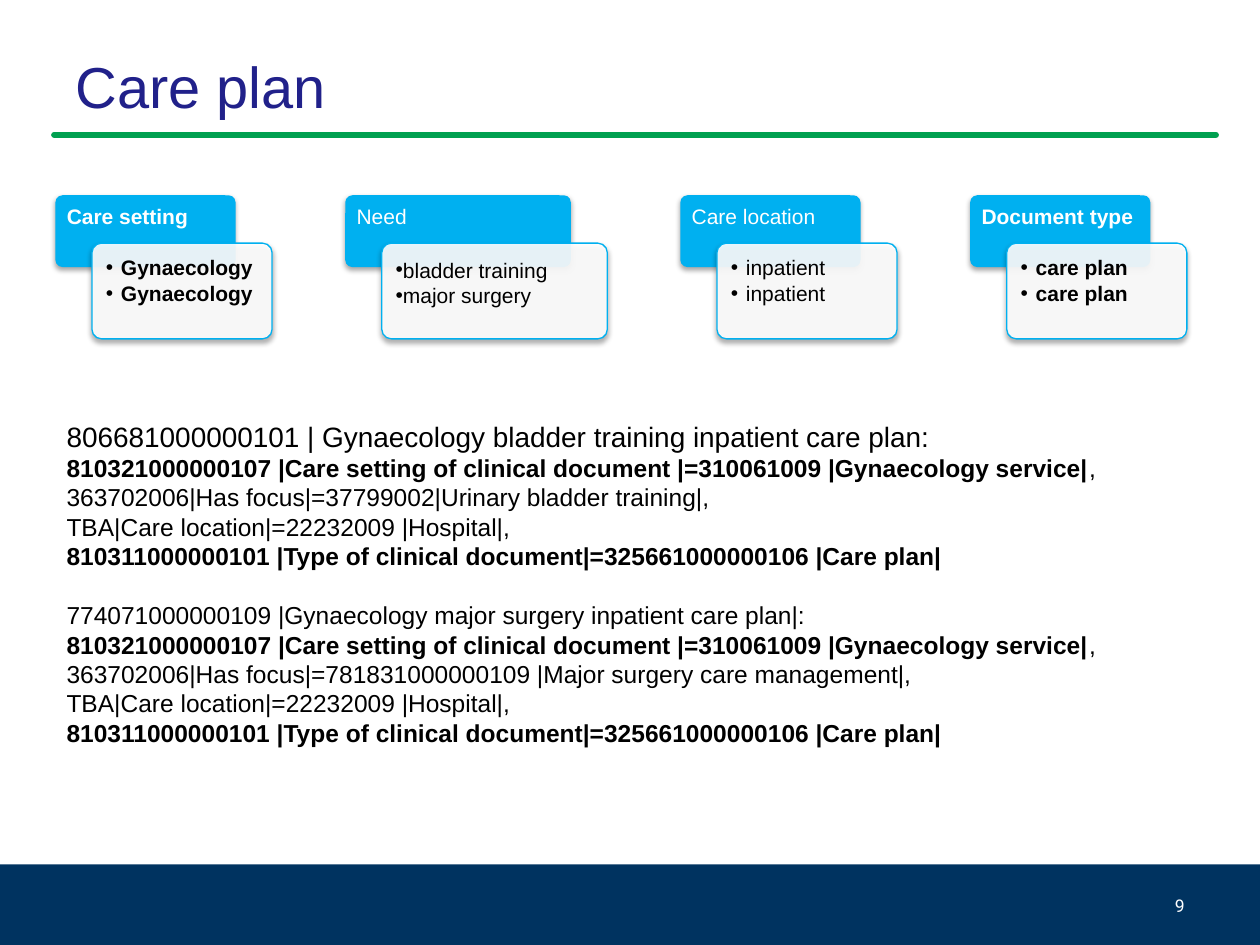
from dataclasses import dataclass

from lxml import etree
from pptx import Presentation, util as u
from pptx.dml.color import RGBColor
from pptx.enum import shapes, text
from pptx.oxml import ns


@dataclass(frozen=True)
class Theme:
    navy: str = "003360"
    green: str = "00A050"
    indigo: str = "21218A"
    sky: str = "00B0F0"
    white: str = "FFFFFF"
    black: str = "000000"
    font: str = "Arial"
    number_font: str = "Roboto"
    title_size: int = 33
    lead_size: int = 16
    body_size: int = 14
    card_size: int = 12
    number_size: int = 10


class SlideBuilder:
    columns, rows = 100, 75

    def __init__(self, presentation, theme):
        self.theme = theme
        self.column = presentation.slide_width / self.columns
        self.row = presentation.slide_height / self.rows
        self.slide = presentation.slides.add_slide(presentation.slide_layouts[6])

    def place(self, left, top, width, height):
        return (u.Emu(round(left * self.column)), u.Emu(round(top * self.row)),
                u.Emu(round(width * self.column)), u.Emu(round(height * self.row)))

    def element(self, parent, tag, **attributes):
        return etree.SubElement(parent, ns.qn(tag), attributes)

    def text_box(self, box, insets=(0.1, 0.05, 0.1, 0.05)):
        frame = self.slide.shapes.add_textbox(*self.place(*box)).text_frame
        frame.word_wrap = True
        frame.margin_left, frame.margin_top, frame.margin_right, frame.margin_bottom = map(u.Inches, insets)
        return frame

    def paragraph(self, frame, pieces, size, color, bold=False, font=None, bullet_indent=None):
        paragraph = frame.paragraphs[0]
        if paragraph.runs:
            paragraph = frame.add_paragraph()
        if bullet_indent is not None:
            properties = paragraph._p.get_or_add_pPr()
            properties.set("marL", str(u.Inches(bullet_indent)))
            properties.set("indent", str(-u.Inches(bullet_indent)))
            self.element(properties, "a:buFont", typeface=self.theme.font)
            self.element(properties, "a:buChar", char="•")
        paragraph.font.name = font or self.theme.font
        paragraph.font.size = u.Pt(size)
        paragraph.font.bold = bold
        paragraph.font.color.rgb = RGBColor.from_string(color)
        for piece in pieces:
            paragraph.add_run().text = piece
        return paragraph

    def panel(self, kind, box, fill, line=None, opacity=100, shadow=False):
        shape = self.slide.shapes.add_shape(kind, *self.place(*box))
        shape.fill.solid()
        shape.fill.fore_color.rgb = RGBColor.from_string(fill)
        if opacity < 100:
            color = shape.element.spPr.find(".//" + ns.qn("a:srgbClr"))
            self.element(color, "a:alpha", val=str(opacity * 1000))
        if line:
            shape.line.color.rgb = RGBColor.from_string(line)
            shape.line.width = u.Pt(0.75)
        else:
            shape.line.fill.background()
        shape.shadow.inherit = False
        if shadow:
            effects = shape.element.spPr.find(ns.qn("a:effectLst"))
            outer = self.element(effects, "a:outerShdw", blurRad=str(u.Pt(3.1)), dist=str(u.Pt(1.8)),
                                 dir="5400000", rotWithShape="0")
            color = self.element(outer, "a:srgbClr", val=self.theme.black)
            self.element(color, "a:alpha", val="35000")
        return shape

    def rule(self, left, right, row):
        x, y, width, _ = self.place(left, row, right - left, 0)
        connector = self.slide.shapes.add_connector(shapes.MSO_CONNECTOR.STRAIGHT, x, y, x + width, y)
        connector.line.color.rgb = RGBColor.from_string(self.theme.green)
        connector.line.width = u.Pt(3.5)
        properties = connector.element.spPr
        properties.find(ns.qn("a:ln")).set("cap", "rnd")
        self.element(properties, "a:effectLst")

    def card(self, left, width, heading, items, bold, indent):
        theme, top, offset = self.theme, 15.5, 2.9
        rounded = shapes.MSO_SHAPE.ROUNDED_RECTANGLE
        header = self.panel(rounded, (left, top, width, 5.7), theme.sky, shadow=True)
        header.adjustments[0] = 0.1
        frame = self.text_box((left, top, width, 3.8), (0.09, 0.09, 0.09, 0.05))
        self.paragraph(frame, [heading], theme.card_size, theme.white, bold).line_spacing = 0.9
        body = self.panel(rounded, (left + offset, top + 3.8, width, 7.6), theme.white,
                          line=theme.sky, opacity=90, shadow=True)
        body.adjustments[0] = 0.1
        frame = self.text_box((left + offset + 0.2, top + 4, width - 0.4, 7.1), (0.09,) * 4)
        for item in items:
            paragraph = self.paragraph(frame, [item], theme.card_size, theme.black, bold, bullet_indent=indent)
            if indent:
                paragraph.line_spacing = 0.9
                paragraph.space_after = u.Pt(1.8)
        return left + offset + width

    def definitions(self, box, concepts):
        theme = self.theme
        frame = self.text_box(box)
        for index, (name, size, focus) in enumerate(concepts):
            lead = self.paragraph(frame, [name], size, theme.black)
            if index:
                lead.space_before = u.Pt(16.8)
            setting = self.paragraph(
                frame,
                ["810321000000107 |Care setting of clinical document |=310061009 |Gynaecology service|", ","],
                theme.body_size, theme.black, True)
            setting.runs[-1].font.bold = False
            for line in (f"363702006|Has focus|={focus}|,", "TBA|Care location|=22232009 |Hospital|,"):
                self.paragraph(frame, [line], theme.body_size, theme.black)
            self.paragraph(frame, ["810311000000101 |Type of clinical document|=325661000000106 |Care plan|"],
                           theme.body_size, theme.black, True)


def main():
    presentation = Presentation()
    presentation.slide_width, presentation.slide_height = u.Inches(10), u.Inches(7.5)
    theme = Theme()
    builder = SlideBuilder(presentation, theme)

    builder.panel(shapes.MSO_SHAPE.RECTANGLE, (0, 68.6, 100, 6.4), theme.navy)
    builder.rule(4.3, 96.5, 10.7)
    title = builder.text_box((5, 3, 90, 7.7), (0.1,) * 4)
    builder.paragraph(title, ["Care plan"], theme.title_size, theme.indigo)
    number = builder.text_box((71.7, 70.3, 23.3, 3.2))
    number.vertical_anchor = text.MSO_ANCHOR.MIDDLE
    builder.paragraph(number, ["9"], theme.number_size, theme.white,
                      font=theme.number_font).alignment = text.PP_ALIGN.RIGHT

    cards = [
        (14.3, "Care setting", ("Gynaecology", "Gynaecology"), True, 0.12),
        (17.9, "Need", ("bladder training", "major surgery"), False, 0),
        (14.3, "Care location", ("inpatient", "inpatient"), False, 0.12),
        (14.3, "Document type", ("care plan", "care plan"), True, 0.12),
    ]
    left, gap = 4.4, 5.8
    for card in cards:
        left = builder.card(left, *card) + gap

    builder.definitions((4.3, 32.8, 91.3, 27.3), [
        ("806681000000101 | Gynaecology bladder training inpatient care plan:", theme.lead_size,
         "37799002|Urinary bladder training"),
        ("774071000000109 |Gynaecology major surgery inpatient care plan|:", theme.body_size,
         "781831000000109 |Major surgery care management"),
    ])
    presentation.save("out.pptx")


if __name__ == "__main__":
    main()
